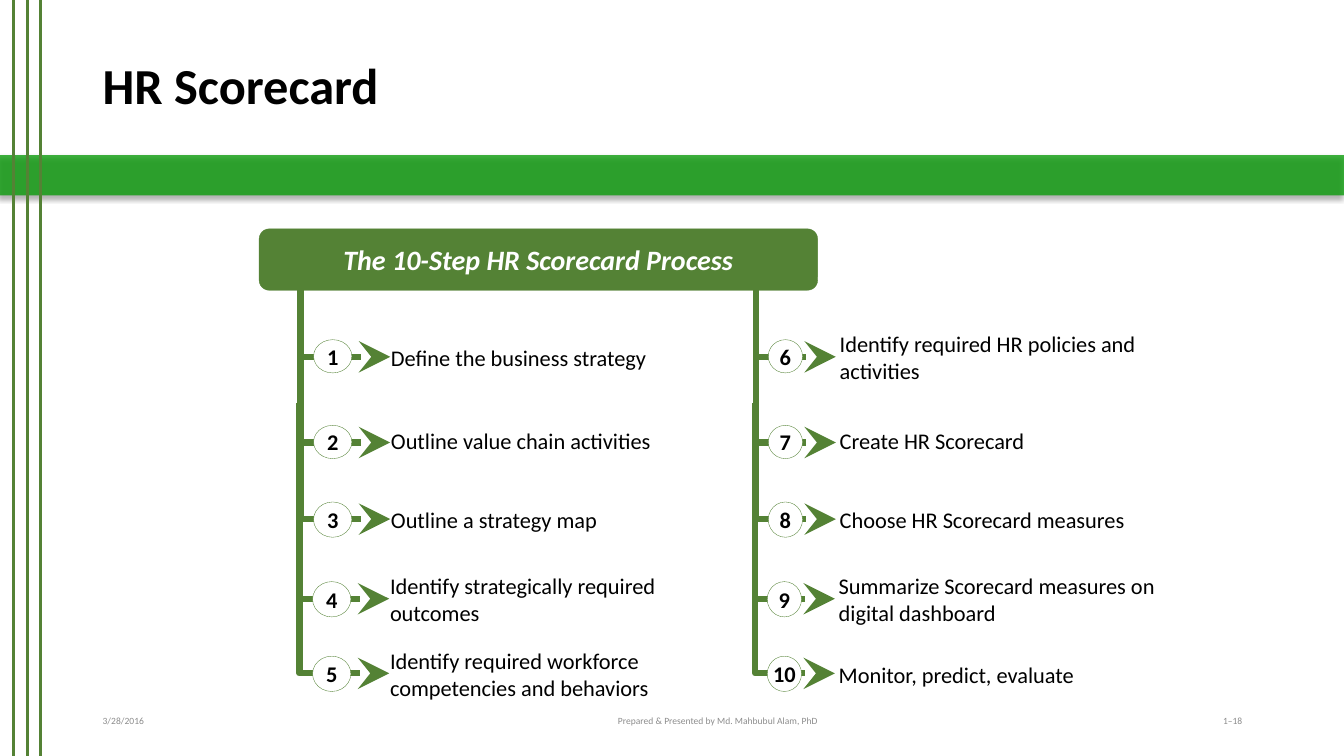
from dataclasses import dataclass

from lxml.etree import SubElement
from pptx import Presentation
from pptx.dml.color import RGBColor
from pptx.enum.shapes import MSO_CONNECTOR as Connector, MSO_SHAPE as Shape
from pptx.enum.text import MSO_ANCHOR as Anchor, PP_ALIGN as Align
from pptx.oxml.ns import qn
from pptx.util import Inches, Pt

COLORS = {
    "green": "548235",
    "band": "009900",
    "black": "000000",
    "white": "FFFFFF",
    "gray": "8C8C8C",
}
FONT = "Calibri"


@dataclass(frozen=True)
class TextStyle:
    size: float
    color: str = "black"
    bold: bool = False
    italic: bool = False
    align: Align = Align.LEFT


@dataclass(frozen=True)
class Row:
    center: float
    stem: float
    circle_height: float
    label_top: float
    label_height: float = 0.52
    shift: float = 0


@dataclass(frozen=True)
class Column:
    stem_left: float
    arm: float
    circle_left: float
    circle_width: float
    label_left: float
    first_number: int
    labels: tuple[str, ...]


ROWS = (
    Row(3.54, 1.11, 0.33, 3.31, 0.47),
    Row(4.39, 1.11, 0.33, 4.11),
    Row(5.15, 1.94, 0.35, 4.89),
    Row(5.94, 1.94, 0.35, 5.68, shift=-0.01),
    Row(6.68, 1.94, 0.35, 6.43, shift=-0.01),
)
COLUMNS = (
    Column(2.98, 0.89, 3.11, 0.38, 3.78, 1, (
        "Define the business strategy",
        "Outline value chain activities",
        "Outline a strategy map",
        "Identify strategically required outcomes",
        "Identify required workforce competencies and behaviors",
    )),
    Column(7.5, 0.79, 7.62, 0.34, 8.23, 6, (
        "Identify required HR policies and activities",
        "Create HR Scorecard",
        "Choose HR Scorecard measures",
        "Summarize Scorecard measures on digital dashboard",
        "Monitor, predict, evaluate",
    )),
)
FOOTERS = (
    ("3/28/2016", 0.92, 3, Align.LEFT),
    ("Prepared & Presented by Md. Mahbubul Alam, PhD", 4.87, 4.5, Align.CENTER),
    ("1–18", 11.43, 0.99, Align.RIGHT),
)


def rgb(name: str) -> RGBColor:
    return RGBColor.from_string(COLORS[name])


def write(box, text: str, style: TextStyle, wrap: bool = True):
    frame = box.text_frame
    frame.word_wrap = wrap
    frame.vertical_anchor = Anchor.MIDDLE
    para = frame.paragraphs[0]
    para.text = text
    para.alignment = style.align
    font = para.font
    font.name, font.size = FONT, Pt(style.size)
    font.bold, font.italic = style.bold, style.italic
    font.color.rgb = rgb(style.color)
    return para


def add_text(page, text: str, left: float, top: float, width: float,
             height: float, style: TextStyle):
    box = page.shapes.add_textbox(
        Inches(left), Inches(top), Inches(width), Inches(height))
    return write(box, text, style)


def add_box(page, kind: Shape, left: float, top: float, width: float,
            height: float, fill: str):
    box = page.shapes.add_shape(
        kind, Inches(left), Inches(top), Inches(width), Inches(height))
    box.fill.solid()
    box.fill.fore_color.rgb = rgb(fill)
    box.line.color.rgb = rgb("green")
    box.line.width = Pt(0.25)
    box.shadow.inherit = False
    return box


def add_band(page) -> None:
    band = add_box(page, Shape.RECTANGLE, 0, 1.54, 13.33, 0.4, "band")
    band.line.fill.background()
    properties = band._element.spPr
    fill_color = properties.find(qn("a:solidFill")).find(qn("a:srgbClr"))
    SubElement(fill_color, qn("a:alpha"), val="75000")
    shadow = SubElement(
        properties.find(qn("a:effectLst")), qn("a:outerShdw"),
        blurRad=str(Pt(4)), dist=str(Pt(3)), dir=str(135 * 60000),
        algn="tr", rotWithShape="0")
    shadow_color = SubElement(shadow, qn("a:srgbClr"), val=COLORS["black"])
    SubElement(shadow_color, qn("a:alpha"), val="40000")


def add_stripe(page, left: float) -> None:
    stripe = page.shapes.add_connector(
        Connector.STRAIGHT, Inches(left), 0, Inches(left), Inches(7.5))
    stripe.line.color.rgb = rgb("green")
    stripe.line.width = Pt(2.25)
    SubElement(stripe._element.spPr, qn("a:effectLst"))


def add_branch(page, left: float, row: Row, arm: float) -> None:
    bottom = Inches(row.center)
    builder = page.shapes.build_freeform(
        Inches(left), Inches(row.center - row.stem))
    builder.add_line_segments(
        [(Inches(left), bottom), (Inches(left + arm), bottom)], close=False)
    branch = builder.convert_to_shape()
    branch.fill.background()
    branch.line.color.rgb = rgb("green")
    branch.line.width = Pt(4.5)
    branch.shadow.inherit = False
    SubElement(branch.line._get_or_add_ln(), qn("a:tailEnd"),
               type="stealth", w="lg", len="lg")


def add_step(page, column: Column, row: Row, number: int) -> None:
    add_branch(page, column.stem_left + row.shift, row, column.arm)
    circle = add_box(
        page, Shape.OVAL, column.circle_left + row.shift, row.center - 0.17,
        column.circle_width, row.circle_height, "white")
    frame = circle.text_frame
    frame.margin_left = frame.margin_right = 0
    frame.margin_top = frame.margin_bottom = 0
    write(circle, str(number),
          TextStyle(16, bold=True, align=Align.CENTER), wrap=False)


def main() -> None:
    deck = Presentation()
    deck.slide_width, deck.slide_height = Inches(13.33), Inches(7.5)
    page = deck.slides.add_slide(deck.slide_layouts[6])

    # Band and side stripes
    add_band(page)
    for left in (0.4, 0.13, 0.27):
        add_stripe(page, left)

    # Title and footer
    title = add_text(page, "HR Scorecard", 0.92, 0.4, 11.36, 0.95,
                     TextStyle(36, bold=True))
    title.line_spacing = 0.9
    for text, left, width, align in FOOTERS:
        add_text(page, text, left, 6.95, width, 0.4,
                 TextStyle(6.8, "gray", align=align))

    # Ten steps in two columns
    for column in COLUMNS:
        for number, row in enumerate(ROWS, column.first_number):
            add_step(page, column, row, number)
        for row, label in zip(ROWS, column.labels):
            add_text(page, label, column.label_left + row.shift, row.label_top,
                     3.44, row.label_height, TextStyle(16))

    # Heading over both columns
    heading = add_box(page, Shape.ROUNDED_RECTANGLE,
                      2.57, 2.27, 5.54, 0.61, "green")
    write(heading, "The 10-Step HR Scorecard Process",
          TextStyle(20, "white", bold=True, italic=True, align=Align.CENTER))

    deck.save("out.pptx")


if __name__ == "__main__":
    main()
